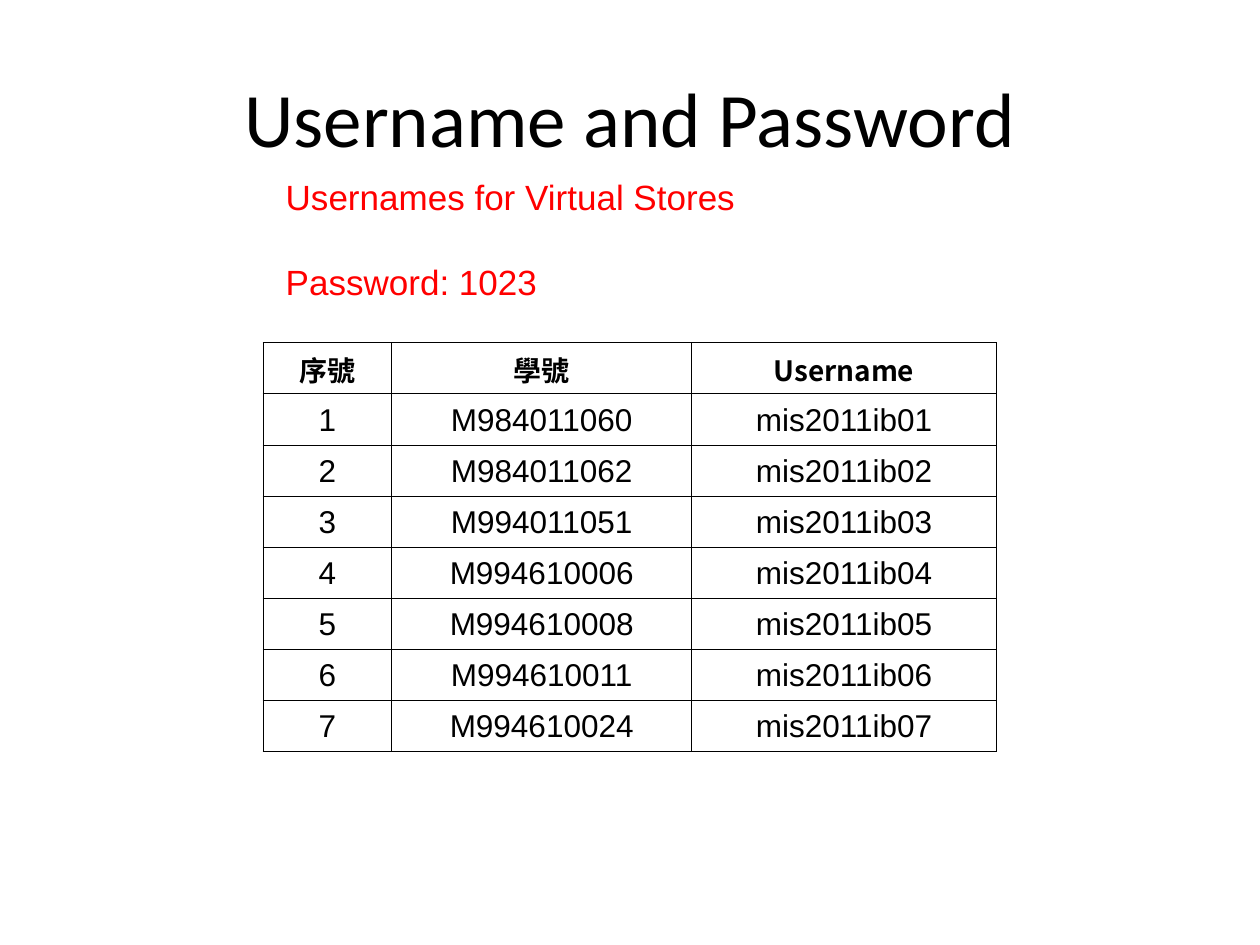
from lxml import etree
from pptx import Presentation
from pptx.dml.color import RGBColor
from pptx.enum import text
from pptx.oxml import ns
from pptx.util import Cm, Pt

HUES = {"ink": "000000", "note": "FF0000"}
HEAD = ["序號", "學號", "Username"]
IDS = ["M984011060", "M984011062", "M994011051", "M994610006",
       "M994610008", "M994610011", "M994610024"]
WIDTHS = [2.6, 6.04, 6.15]
ROW = 1.03


def add_run(para, words, size, font, hue="ink", bold=False):
    run = para.add_run()
    run.text = words
    run.font.size = Pt(size)
    run.font.name = font
    run.font.bold = bold
    run.font.color.rgb = RGBColor.from_string(HUES[hue])
    east = etree.SubElement(run._r.get_or_add_rPr(), ns.qn("a:ea"))
    east.set("typeface", font)


def rule_cell(cell):
    """Draw a thin line on all four sides of a cell and leave it unfilled."""
    props = cell._tc.get_or_add_tcPr()
    for side in ("lnL", "lnR", "lnT", "lnB"):
        line = etree.SubElement(props, ns.qn("a:" + side), w=str(Pt(0.5)))
        fill = etree.SubElement(line, ns.qn("a:solidFill"))
        etree.SubElement(fill, ns.qn("a:srgbClr"), val=HUES["ink"])
    cell.fill.background()


deck = Presentation()
deck.slide_width, deck.slide_height = Cm(25.4), Cm(19.05)
slide = deck.slides.add_slide(deck.slide_layouts[5])

# Title
title = slide.shapes.title
title.left, title.top = Cm(1.27), Cm(0.76)
title.width, title.height = Cm(22.86), Cm(3.18)
title.text_frame.vertical_anchor = text.MSO_ANCHOR.MIDDLE
para = title.text_frame.paragraphs[0]
para.alignment = text.PP_ALIGN.CENTER
add_run(para, "Username and Password", 44, "Calibri")

# Table of accounts
rows = [HEAD] + [[str(n), code, f"mis2011ib{n:02}"]
                 for n, code in enumerate(IDS, 1)]
table = slide.shapes.add_table(len(rows), len(HEAD), Cm(5.3), Cm(6.91),
                               Cm(sum(WIDTHS)), Cm(ROW * len(rows))).table
table.first_row = table.horz_banding = False
for col, width in zip(table.columns, WIDTHS):
    col.width = Cm(width)
for r, row in enumerate(rows):
    table.rows[r].height = Cm(ROW)
    for c, words in enumerate(row):
        cell = table.cell(r, c)
        cell.margin_left = cell.margin_right = cell.margin_top = Cm(0.03)
        cell.margin_bottom = 0
        cell.vertical_anchor = text.MSO_ANCHOR.MIDDLE
        rule_cell(cell)
        para = cell.text_frame.paragraphs[0]
        para.alignment = text.PP_ALIGN.CENTER
        if r == 0:
            add_run(para, words, 16, "Noto Sans CJK TC", bold=True)
        else:
            add_run(para, words, 18, "Arial")

# Login note
note = slide.shapes.add_textbox(Cm(5.51), Cm(3.38), Cm(14.6), Cm(3.58))
frame = note.text_frame
frame.word_wrap = True
frame.margin_top = Cm(0.15)
first, last = frame.paragraphs[0], frame.add_paragraph()
first.space_after = Pt(25)
add_run(first, "Usernames for Virtual Stores", 20, "Arial", "note")
add_run(last, "Password: 1023", 20, "Arial", "note")

deck.save("out.pptx")
